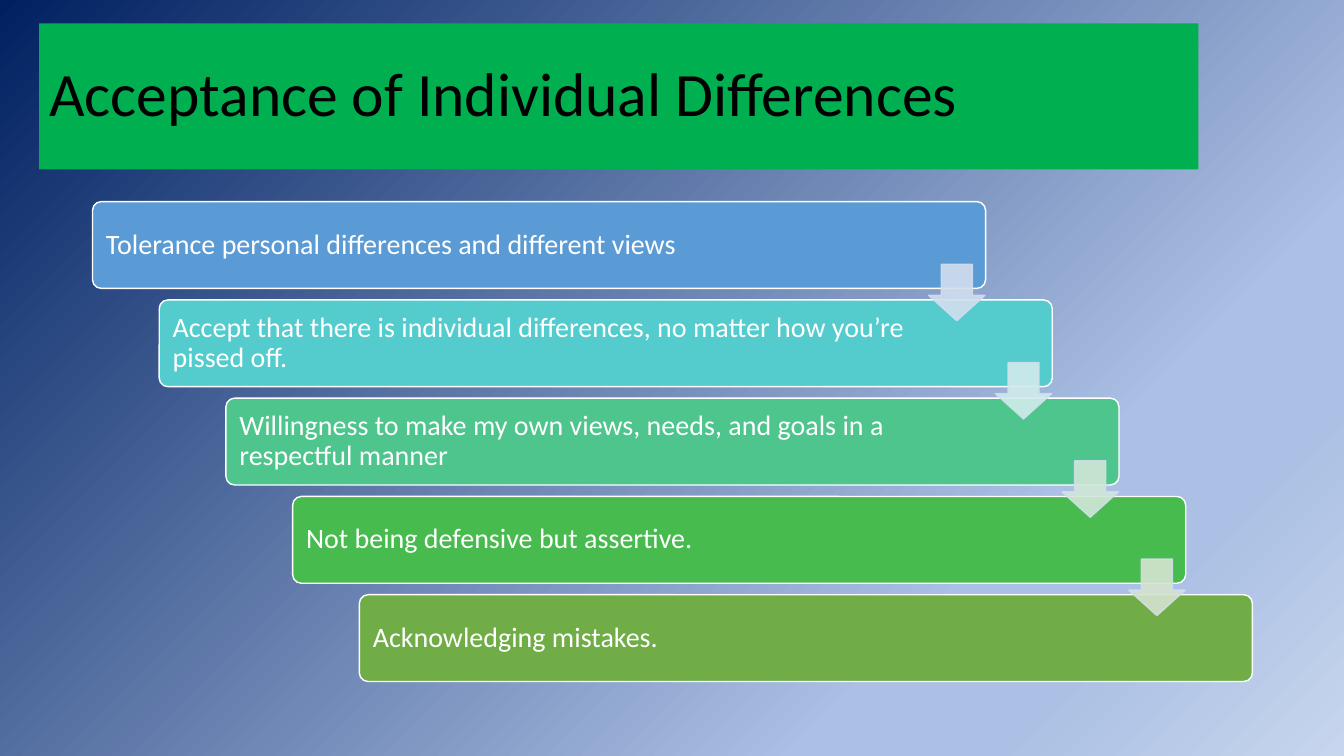
import copy

import pptx
import pptx.dml.color
import pptx.enum.shapes
import pptx.enum.text
import pptx.oxml.ns
import pptx.util
from lxml import etree

Pt = pptx.util.Pt
MSO_SHAPE = pptx.enum.shapes.MSO_SHAPE

COLORS = {
    "title_fill": "00B050",
    "title_text": "000000",
    "white": "FFFFFF",
    "arrow_line": "D2DEEF",
}
BACKGROUND_STOPS = [(0, "002060"), (74, "ABC0E4"), (83, "ABC0E4"), (100, "C7D5ED")]
STEPS = [
    ("Tolerance personal differences and different views", "5B9BD5"),
    ("Accept that there is individual differences, no matter how you’re pissed off.", "54CCCD"),
    ("Willingness to make my own views, needs, and goals in a respectful manner", "4DC58D"),
    ("Not being defensive but assertive.", "48BB4F"),
    ("Acknowledging mistakes.", "70AD47"),
]
ARROW_FILLS = ["D2DEEF", "D0ECEA", "D0E7D8", "D5E3CF"]
STEP_DX, STEP_DY = 47.65, 70.2


def rgb(value):
    return pptx.dml.color.RGBColor.from_string(value)


class SlideBuilder:
    def __init__(self, slide, font="Calibri"):
        self.slide = slide
        self.font = font

    def background(self, stops, angle):
        """Fill with (percent, colour) stops; angle is clockwise in degrees."""
        fill = self.slide.background.fill
        fill.gradient()
        fill.gradient_angle = 360 - angle
        gs_list = self.slide.element.xpath(".//p:bgPr/a:gradFill/a:gsLst")[0]
        for _ in range(len(stops) - len(gs_list)):
            gs_list.append(copy.deepcopy(gs_list[-1]))
        for stop, (percent, color) in zip(fill.gradient_stops, stops):
            stop.position = percent / 100
            stop.color.rgb = rgb(color)

    def text(self, sp, text, size, color):
        tf = sp.text_frame
        tf.word_wrap = True
        tf.vertical_anchor = pptx.enum.text.MSO_ANCHOR.MIDDLE
        p = tf.paragraphs[0]
        p.alignment = pptx.enum.text.PP_ALIGN.LEFT
        p.line_spacing = 0.9
        r = p.add_run()
        r.text = text
        r.font.name = self.font
        r.font.size = Pt(size)
        r.font.color.rgb = rgb(color)
        return tf

    def title(self, text, left, top, width, height):
        sp = self.slide.shapes.title
        sp.left, sp.top, sp.width, sp.height = map(Pt, (left, top, width, height))
        sp.fill.solid()
        sp.fill.fore_color.rgb = rgb(COLORS["title_fill"])
        self.text(sp, text, 44, COLORS["title_text"])

    def shape(self, kind, box, adjustments, fill, line):
        sp = self.slide.shapes.add_shape(kind, *map(Pt, box))
        sp.shadow.inherit = False
        for i, value in enumerate(adjustments):
            sp.adjustments[i] = value
        sp.fill.solid()
        sp.fill.fore_color.rgb = rgb(fill)
        sp.line.color.rgb = rgb(line)
        sp.line.width = Pt(1)
        return sp

    def step(self, text, left, top, fill, right_inset):
        sp = self.shape(MSO_SHAPE.ROUNDED_RECTANGLE, (left, top, 637.9, 62),
                        [0.1], fill, COLORS["white"])
        tf = self.text(sp, text, 20, COLORS["white"])
        tf.margin_left, tf.margin_right = Pt(7.8), Pt(right_inset)
        tf.margin_top = tf.margin_bottom = Pt(6)

    def arrow(self, left, top, fill):
        sp = self.shape(MSO_SHAPE.DOWN_ARROW, (left, top, 40.3, 40.3),
                        [0.55, 0.45], fill, COLORS["arrow_line"])
        for color in sp.element.spPr.xpath(".//a:srgbClr"):
            etree.SubElement(color, pptx.oxml.ns.qn("a:alpha"), val="90000")


def main():
    prs = pptx.Presentation()
    prs.slide_width, prs.slide_height = Pt(960), Pt(540)
    s = SlideBuilder(prs.slides.add_slide(prs.slide_layouts[5]))
    s.background(BACKGROUND_STOPS, 45)
    s.title("Acceptance of Individual Differences", 28, 16.6, 828, 104.4)
    for i, (text, fill) in enumerate(STEPS):
        s.step(text, 66.1 + i * STEP_DX, 144 + i * STEP_DY, fill, 78 if i == 0 else 95)
    for i, fill in enumerate(ARROW_FILLS):
        s.arrow(663.3 + i * STEP_DX, 188.8 + i * STEP_DY, fill)
    prs.save("out.pptx")


if __name__ == "__main__":
    main()
